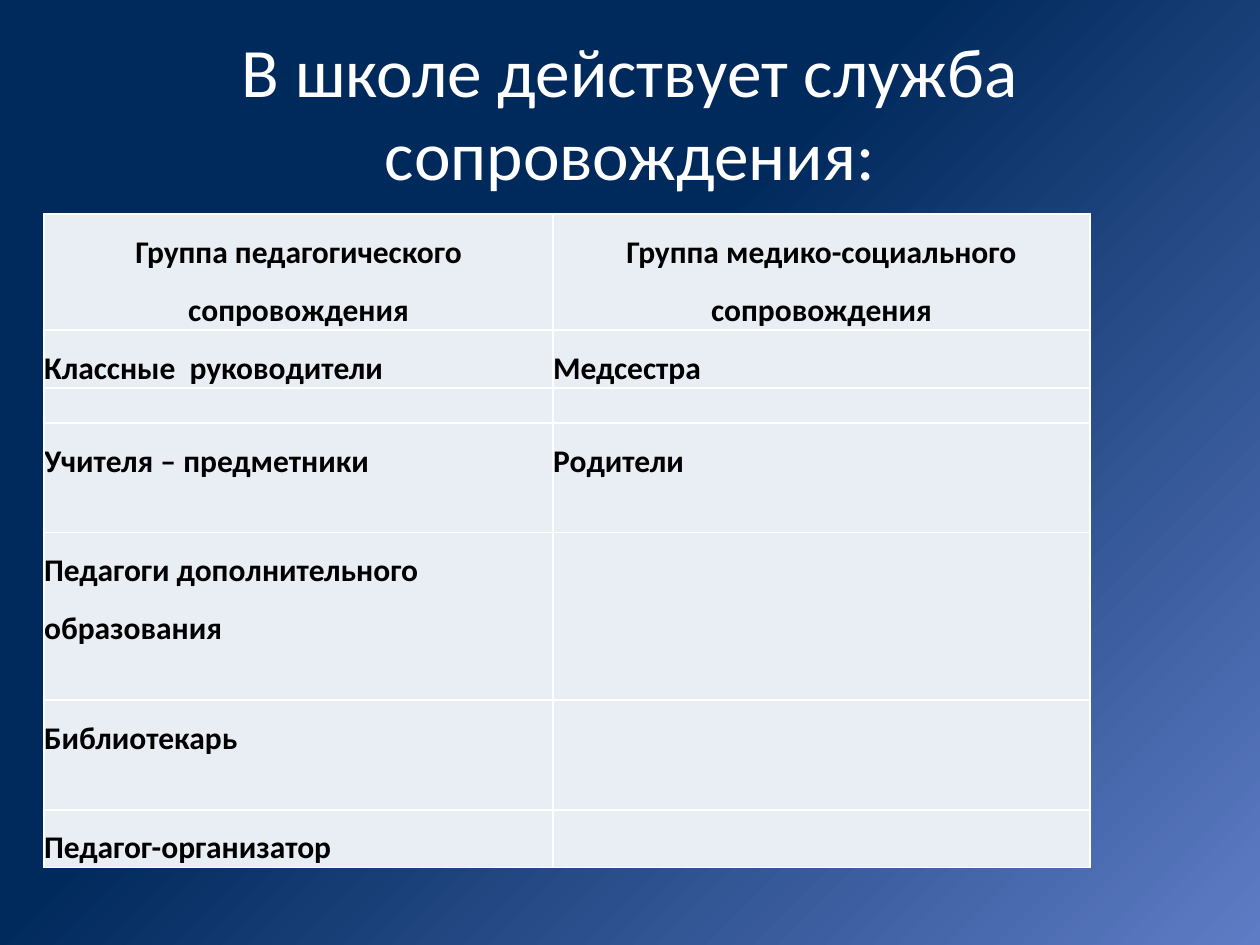
import pptx
import pptx.dml.color
import pptx.enum.text
import pptx.oxml
import pptx.oxml.ns
import pptx.util
from lxml import etree

Inches, Pt = pptx.util.Inches, pptx.util.Pt
RGBColor = pptx.dml.color.RGBColor
ALIGN, ANCHOR = pptx.enum.text.PP_ALIGN, pptx.enum.text.MSO_ANCHOR
qn = pptx.oxml.ns.qn

# Content
HEADING = "В школе действует служба сопровождения:"
SUPPORT_GROUPS = [  # row height, pedagogical group, medical and social group
    (0.92, "Группа педагогического сопровождения", "Группа медико-социального сопровождения"),
    (0.45, "Классные  руководители", "Медсестра"),
    (0.28, "", ""),
    (0.87, "Учителя – предметники", "Родители"),
    (1.33, "Педагоги дополнительного образования", ""),
    (0.87, "Библиотекарь", ""),
    (0.45, "Педагог-организатор", ""),
]
COLUMN_WIDTHS = (4.04, 4.26)

FONT = "Calibri"
WHITE = RGBColor(0xFF, 0xFF, 0xFF)
BLACK = RGBColor(0, 0, 0)
PALE = RGBColor(0xE9, 0xED, 0xF4)
GLOW = RGBColor(0x5E, 0x7C, 0xC5)
NAVY = RGBColor(0x00, 0x29, 0x5C)


def style_run(run, size, color, bold):
    run.font.name, run.font.size = FONT, Pt(size)
    run.font.color.rgb, run.font.bold = color, bold


def add_borders(cell):
    properties = cell._tc.get_or_add_tcPr()
    for index, side in enumerate(("lnL", "lnR", "lnT", "lnB")):
        line = pptx.oxml.parse_xml(
            f'<a:{side} {pptx.oxml.ns.nsdecls("a")} w="{Pt(1)}"><a:solidFill>'
            f'<a:srgbClr val="{WHITE}"/></a:solidFill></a:{side}>')
        properties.insert(index, line)


def fill_cell(cell, text, is_header):
    cell.margin_left = cell.margin_right = cell.margin_top = cell.margin_bottom = 0
    cell.fill.solid()
    cell.fill.fore_color.rgb = PALE
    add_borders(cell)
    cell.text_frame.text = text
    paragraph = cell.text_frame.paragraphs[0]
    if not text:
        etree.SubElement(paragraph._p, qn("a:endParaRPr"), sz="1200")
        return
    paragraph.line_spacing = 1.5
    paragraph.alignment = ALIGN.CENTER if is_header else ALIGN.LEFT
    style_run(paragraph.runs[0], 18, BLACK, True)


deck = pptx.Presentation()
deck.slide_width, deck.slide_height = Inches(10), Inches(7.5)
slide = deck.slides.add_slide(deck.slide_layouts[5])

# Background glowing from the lower right corner
backdrop = slide.background.fill
backdrop.gradient()
for stop, color, position in zip(backdrop.gradient_stops, (GLOW, NAVY), (0, 0.58)):
    stop.color.rgb, stop.position = color, position
gradient = slide.background._cSld.find(".//" + qn("a:gradFill"))
gradient.remove(gradient.find(qn("a:lin")))
glow_shape = etree.SubElement(gradient, qn("a:path"), path="circle")
etree.SubElement(glow_shape, qn("a:fillToRect"), l="100000", t="100000")

# Title, raised above the table by its bottom inset
title = slide.shapes.title
title.left, title.top, title.width, title.height = map(Inches, (0.5, 0.3, 9, 1.72))
title.text_frame.text = HEADING
title.text_frame.vertical_anchor = ANCHOR.MIDDLE
title.text_frame.margin_bottom = Inches(0.6)
title.text_frame.paragraphs[0].alignment = ALIGN.CENTER
style_run(title.text_frame.paragraphs[0].runs[0], 39.6, WHITE, False)

# Table of support groups
table = slide.shapes.add_table(
    len(SUPPORT_GROUPS), len(COLUMN_WIDTHS), Inches(0.35), Inches(1.7),
    Inches(sum(COLUMN_WIDTHS)), Inches(sum(row[0] for row in SUPPORT_GROUPS))).table
for column, width in zip(table.columns, COLUMN_WIDTHS):
    column.width = Inches(width)
for row_index, (height, *members) in enumerate(SUPPORT_GROUPS):
    table.rows[row_index].height = Inches(height)
    for column_index, member in enumerate(members):
        fill_cell(table.cell(row_index, column_index), member, row_index == 0)

deck.save("out.pptx")
